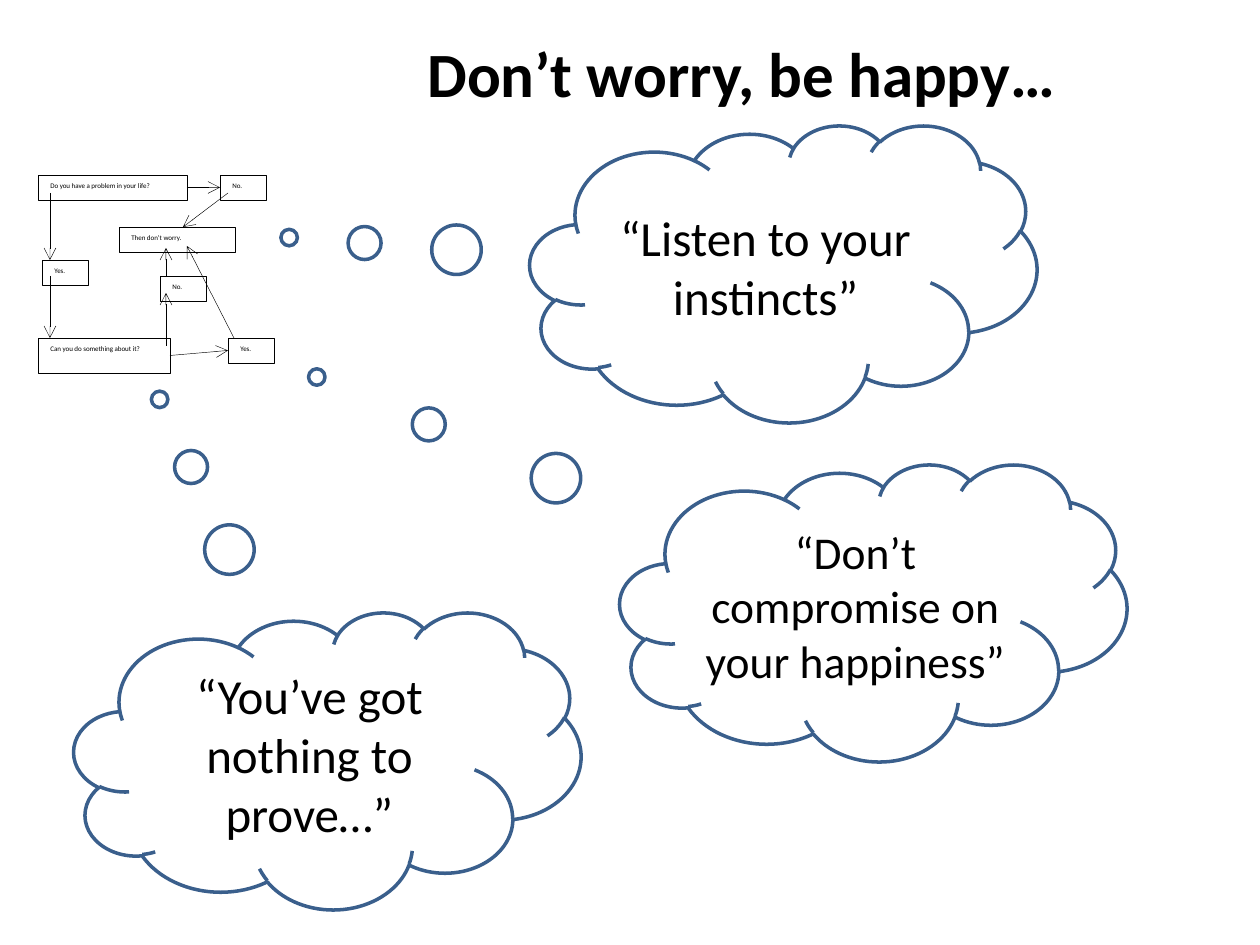
from lxml import etree
from pptx import Presentation
from pptx.dml.color import RGBColor
from pptx.enum.shapes import MSO_CONNECTOR, MSO_SHAPE
from pptx.enum.text import MSO_ANCHOR, PP_ALIGN
from pptx.oxml.ns import qn
from pptx.util import Emu, Pt

CLOUD = MSO_SHAPE.CLOUD_CALLOUT
RECTANGLE = MSO_SHAPE.RECTANGLE
STRAIGHT = MSO_CONNECTOR.STRAIGHT
TOP, MIDDLE = MSO_ANCHOR.TOP, MSO_ANCHOR.MIDDLE
LEFT, CENTER = PP_ALIGN.LEFT, PP_ALIGN.CENTER
LEFT_SIDE, RIGHT_SIDE = 1, 3

BLACK, BLUE = "000000", "3A5F8C"
CLOUD_WIDTH, CLOUD_HEIGHT = 507, 297
BOX_HEIGHT, ANSWER_WIDTH = 25, 46

CLOUDS = [
    (530, 125, -0.975, -0.121, "“Listen to your instincts”", 28),
    (74, 612, -0.331, -1.216, "“You’ve got nothing to prove…”", 28),
    (620, 464, -1.098, -0.793, "“Don’t compromise on your happiness”", 26),
]
BOXES = {
    "problem": (38, 175, 149, BOX_HEIGHT, "Do you have a problem in your life?"),
    "calm": (119, 227, 116, BOX_HEIGHT, "Then don’t worry."),
    "action": (38, 338, 132, 35, "Can you do something about it?"),
    "no problem": (220, 175, ANSWER_WIDTH, BOX_HEIGHT, "No."),
    "has problem": (42, 260, ANSWER_WIDTH, BOX_HEIGHT, "Yes."),
    "can act": (228, 338, ANSWER_WIDTH, BOX_HEIGHT, "Yes."),
    "cannot act": (160, 276, ANSWER_WIDTH, BOX_HEIGHT, "No."),
}
JOINED_ARROWS = [("problem", "no problem"), ("action", "can act")]
FREE_ARROWS = [
    (50, 193, 50, 260),
    (50, 276, 50, 338),
    (166, 346, 166, 293),
    (166, 276, 166, 248),
    (228, 193, 183, 227),
    (234, 338, 187, 246),
]


def px(*lengths):
    return [Emu(round(length * 914400 / 126)) for length in lengths]


def color(value):
    return RGBColor.from_string(value)


def set_line(item, line_color, width):
    item.line.color.rgb = color(line_color)
    item.line.width = Pt(width)


def write(shape, text, size, alignment, anchor, bold=False):
    frame = shape.text_frame
    frame.word_wrap = True
    frame.vertical_anchor = anchor
    paragraph = frame.paragraphs[0]
    paragraph.text = text
    paragraph.alignment = alignment
    formats = {"name": "Calibri", "size": Pt(size), "bold": bold}
    for name, value in formats.items():
        setattr(paragraph.font, name, value)
    paragraph.font.color.rgb = color(BLACK)


def add_outline(shapes, kind, bounds, line_color, line_width):
    shape = shapes.add_shape(kind, *px(*bounds))
    shape.shadow.inherit = False
    shape.fill.background()
    set_line(shape, line_color, line_width)
    return shape


def add_title(slide):
    title = slide.shapes.add_textbox(*px(223, 0, 1037, 145))
    write(title, "Don’t worry, be happy…", 36, CENTER, MIDDLE, bold=True)


def add_cloud(slide, left, top, tail_x, tail_y, text, size):
    bounds = left, top, CLOUD_WIDTH, CLOUD_HEIGHT
    cloud = add_outline(slide.shapes, CLOUD, bounds, BLUE, 2)
    cloud.adjustments[0] = tail_x
    cloud.adjustments[1] = tail_y
    write(cloud, text, size, CENTER, MIDDLE)


def add_box(shapes, *bounds, text):
    box = add_outline(shapes, RECTANGLE, bounds, BLACK, 0.25)
    write(box, text, 4, LEFT, TOP)
    return box


def add_arrow(shapes, *ends):
    arrow = shapes.add_connector(STRAIGHT, *ends)
    set_line(arrow, BLACK, 0.25)
    line = arrow.line._get_or_add_ln()
    etree.SubElement(line, qn("a:tailEnd"), type="arrow")
    etree.SubElement(arrow._element.spPr, qn("a:effectLst"))
    return arrow


def add_flowchart(slide):
    shapes = slide.shapes.add_group_shape().shapes
    boxes = {
        name: add_box(shapes, *bounds, text=text)
        for name, (*bounds, text) in BOXES.items()
    }
    for source, target in JOINED_ARROWS:
        start, end = boxes[source], boxes[target]
        arrow = add_arrow(shapes, start.left + start.width, start.top, end.left, end.top)
        arrow.begin_connect(start, RIGHT_SIDE)
        arrow.end_connect(end, LEFT_SIDE)
    for ends in FREE_ARROWS:
        add_arrow(shapes, *px(*ends))


def main():
    presentation = Presentation()
    presentation.slide_width, presentation.slide_height = px(1260, 945)
    slide = presentation.slides.add_slide(presentation.slide_layouts[6])
    add_title(slide)
    for cloud in CLOUDS:
        add_cloud(slide, *cloud)
    add_flowchart(slide)
    presentation.save("out.pptx")


if __name__ == "__main__":
    main()
